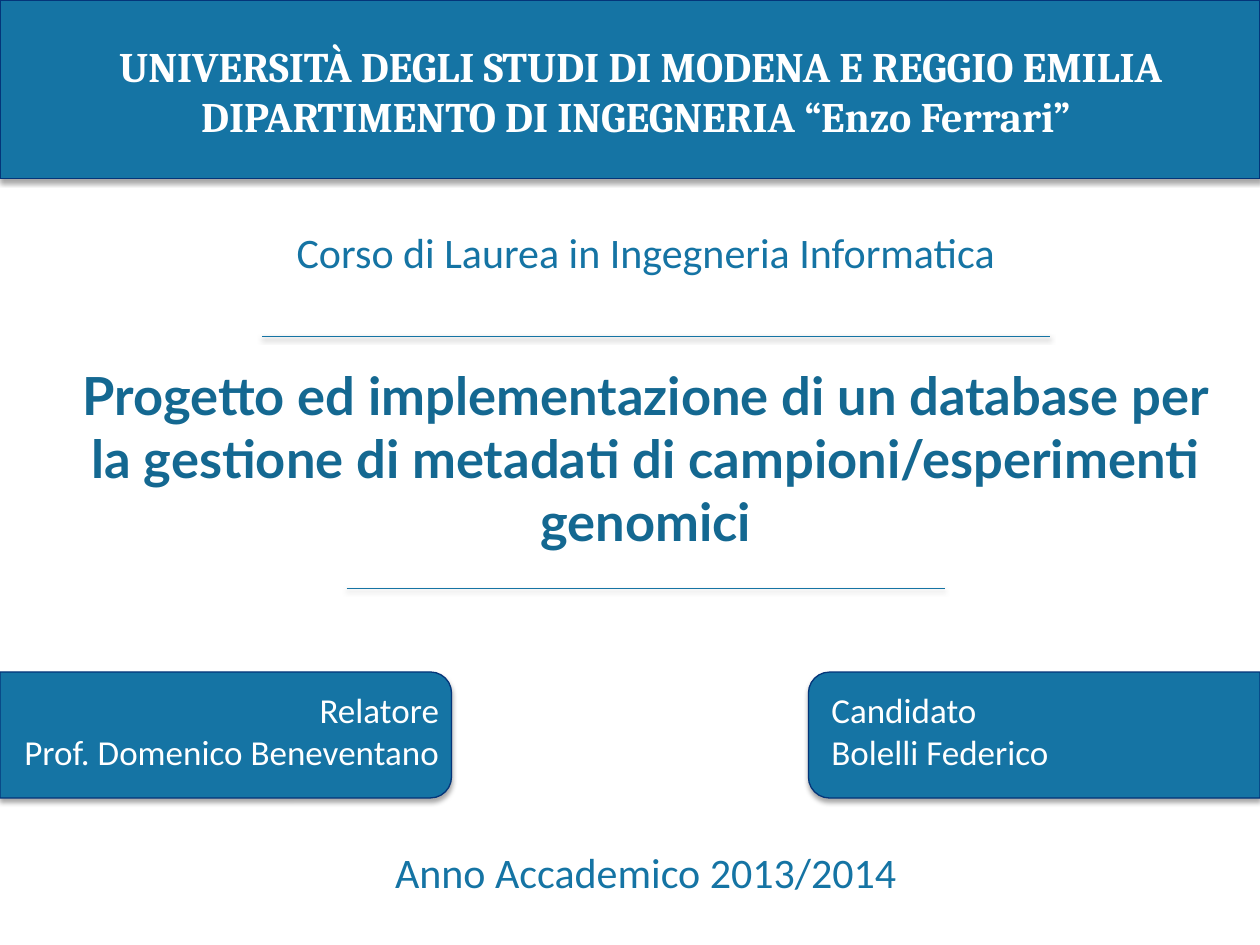
from lxml.etree import SubElement
from pptx import Presentation
from pptx.dml.color import RGBColor
from pptx.enum.shapes import MSO_CONNECTOR, MSO_SHAPE
from pptx.enum.text import MSO_ANCHOR, MSO_AUTO_SIZE, PP_ALIGN
from pptx.oxml.ns import qn
from pptx.util import Inches, Pt

C = {"blue": "1574A4", "navy": "043579", "title": "146891", "white": "FFFFFF", "black": "000000"}

prs = Presentation()
prs.slide_width, prs.slide_height = Inches(10), Inches(7.5)
U = prs.slide_width / 120
s = prs.slides.add_slide(prs.slide_layouts[0])


def add_shadow(sp, alpha, dist):
    spPr = sp._element.spPr
    for old in spPr.findall(qn("a:effectLst")):
        spPr.remove(old)
    shadow = SubElement(SubElement(spPr, qn("a:effectLst")), qn("a:outerShdw"),
                        blurRad=str(Pt(3.1)), dist=str(Pt(dist)), dir="5400000", rotWithShape="0")
    color = SubElement(shadow, qn("a:srgbClr"), val=C["black"])
    SubElement(color, qn("a:alpha"), val=str(alpha * 1000))


def write(sp, box, lines, size, font, color, align, bold=False, anchor=MSO_ANCHOR.TOP):
    sp.left, sp.top, sp.width, sp.height = [int(v * U) for v in box]
    tf = sp.text_frame
    for k, v in {"word_wrap": True, "auto_size": MSO_AUTO_SIZE.NONE, "vertical_anchor": anchor}.items():
        setattr(tf, k, v)
    tf.text = "\n".join(lines)
    for p in tf.paragraphs:
        p.alignment, p.space_before = align, Pt(0)
        f = p.runs[0].font
        for k, v in {"size": Pt(size), "name": font, "bold": bold}.items():
            setattr(f, k, v)
        f.color.rgb = RGBColor.from_string(C[color])


panels = [
    (MSO_SHAPE.RECTANGLE, (0, 0, 120, 17), 0),
    (MSO_SHAPE.ROUND_2_SAME_RECTANGLE, (15.5, 48.5, 12, 43), 90),
    (MSO_SHAPE.ROUND_2_SAME_RECTANGLE, (92.5, 48.5, 12, 43), 270),
]
for i, (kind, box, angle) in enumerate(panels):
    sp = s.shapes.add_shape(kind, *[int(v * U) for v in box])
    sp.rotation = angle
    sp.fill.solid()
    sp.fill.fore_color.rgb = RGBColor.from_string(C["blue"])
    sp.line.color.rgb = RGBColor.from_string(C["navy"])
    sp.line.width = Pt(0.75)
    add_shadow(sp, 35, 1.8)
    s.shapes._spTree.insert(2 + i, sp._element)

write(s.shapes.title, (7, -1, 108, 19.3),
      ["UNIVERSITÀ DEGLI STUDI DI MODENA E REGGIO EMILIA DIPARTIMENTO DI INGEGNERIA “Enzo Ferrari” "],
      24, "Cambria", "white", PP_ALIGN.CENTER, True, MSO_ANCHOR.MIDDLE)
write(s.placeholders[1], (25, 21, 73, 6), ["Corso di Laurea in Ingegneria Informatica"],
      24, "Calibri", "blue", PP_ALIGN.CENTER)

texts = [
    ((25, 80, 73, 6), ["Anno Accademico 2013/2014"], 24, "Calibri", "blue", PP_ALIGN.CENTER),
    ((1, 65, 42, 9.3), ["Relatore", "Prof. Domenico Beneventano "], 20, "Calibri", "white", PP_ALIGN.RIGHT),
    ((5, 34, 113, 19.5),
     ["Progetto ed implementazione di un database per la gestione di metadati di campioni/esperimenti genomici"],
     30, "Lato", "title", PP_ALIGN.CENTER, True),
    ((78, 65, 42, 9.3), ["Candidato", "Bolelli Federico"], 20, "Calibri", "white", PP_ALIGN.LEFT),
]
for args in texts:
    write(s.shapes.add_textbox(0, 0, 0, 0), *args)

for x1, x2, y in [(25, 100, 32), (33, 90, 56)]:
    ln = s.shapes.add_connector(MSO_CONNECTOR.STRAIGHT, *[int(v * U) for v in (x1, y, x2, y)])
    ln.line.color.rgb = RGBColor.from_string(C["blue"])
    ln.line.width = Pt(0.25)
    add_shadow(ln, 38, 1.6)

prs.save("out.pptx")
